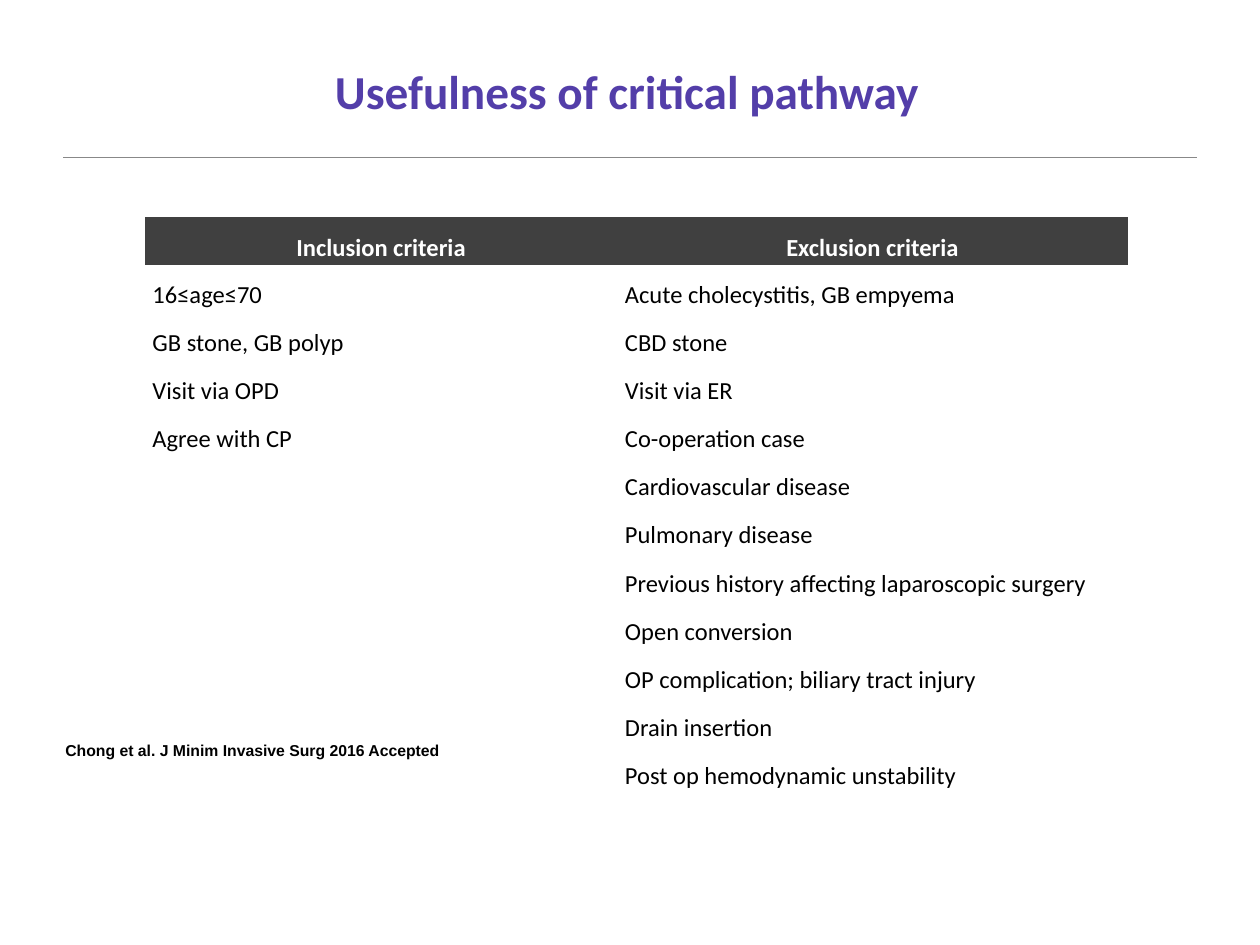
from itertools import zip_longest

from lxml import etree
from pptx import Presentation
from pptx.dml.color import RGBColor
from pptx.enum.shapes import MSO_CONNECTOR
from pptx.enum.text import MSO_ANCHOR, MSO_AUTO_SIZE, PP_ALIGN
from pptx.oxml.ns import qn
from pptx.util import Inches, Pt

STRAIGHT = MSO_CONNECTOR.STRAIGHT
MIDDLE, TOP = MSO_ANCHOR.MIDDLE, MSO_ANCHOR.TOP
LEFT, CENTER = PP_ALIGN.LEFT, PP_ALIGN.CENTER
NO_AUTO_SIZE = MSO_AUTO_SIZE.NONE
FIT_SHAPE = MSO_AUTO_SIZE.SHAPE_TO_FIT_TEXT

PURPLE = RGBColor(0x53, 0x3E, 0xA9)
RULE_GRAY = RGBColor(0x88, 0x88, 0x88)
HEADER_GRAY = RGBColor(0x40, 0x40, 0x40)
WHITE = RGBColor(0xFF, 0xFF, 0xFF)
BLACK = RGBColor(0, 0, 0)

PLAIN_TABLE_STYLE = "{2D5ABB26-0587-4C30-8999-92F81FD0307C}"
TITLE_ONLY = 5

HEADERS = ("Inclusion criteria", "Exclusion criteria")
INCLUSION = ("16≤age≤70", "GB stone, GB polyp", "Visit via OPD", "Agree with CP")
EXCLUSION = (
    "Acute cholecystitis, GB empyema",
    "CBD stone",
    "Visit via ER",
    "Co-operation case",
    "Cardiovascular disease",
    "Pulmonary disease",
    "Previous history affecting laparoscopic surgery",
    "Open conversion",
    "OP complication; biliary tract injury",
    "Drain insertion",
    "Post op hemodynamic unstability",
)


class SlideBuilder:
    body_font = "Calibri"
    note_font = "Arial"
    table_size = 14
    line_spacing = 1.5

    def __init__(self, slide):
        self.slide = slide

    def run(self, paragraph, text, size, color, bold=False, font=body_font):
        run = paragraph.add_run()
        run.text = text
        run.font.name = font
        run.font.size = Pt(size)
        run.font.bold = bold
        run.font.color.rgb = color

    def title(self, text, left, top, width, height):
        title = self.slide.shapes.title
        title.left, title.top = Inches(left), Inches(top)
        title.width, title.height = Inches(width), Inches(height)
        frame = title.text_frame
        frame.auto_size = NO_AUTO_SIZE
        frame.vertical_anchor = MIDDLE
        paragraph = frame.paragraphs[0]
        paragraph.alignment = CENTER
        self.run(paragraph, text, 27, PURPLE, bold=True)

    def rule(self, left, right, y):
        rule = self.slide.shapes.add_connector(
            STRAIGHT, Inches(left), Inches(y), Inches(right), Inches(y))
        rule.line.color.rgb = RULE_GRAY
        rule.line.width = Pt(1)
        etree.SubElement(rule._element.spPr, qn("a:effectLst"))

    def cell(self, cell, text, is_header):
        cell.margin_left = cell.margin_right = Inches(0.06)
        cell.margin_top = cell.margin_bottom = 0
        cell.vertical_anchor = MIDDLE if is_header else TOP
        if is_header:
            cell.fill.solid()
            cell.fill.fore_color.rgb = HEADER_GRAY
        else:
            cell.fill.background()
        if text:
            paragraph = cell.text_frame.paragraphs[0]
            paragraph.alignment = CENTER if is_header else LEFT
            paragraph.line_spacing = self.line_spacing
            color = WHITE if is_header else BLACK
            self.run(paragraph, text, self.table_size, color, bold=is_header)

    def table(self, rows, left, top, column_widths, height):
        frame = self.slide.shapes.add_table(
            len(rows), len(column_widths), Inches(left), Inches(top),
            Inches(sum(column_widths)), Inches(height))
        table = frame.table
        table.horz_banding = False
        table._tbl.tblPr.find(qn("a:tableStyleId")).text = PLAIN_TABLE_STYLE
        for column, width in zip(table.columns, column_widths):
            column.width = Inches(width)
        for row_index, texts in enumerate(rows):
            for column_index, text in enumerate(texts):
                self.cell(table.cell(row_index, column_index), text, row_index == 0)

    def note(self, text, left, top, width, height):
        box = self.slide.shapes.add_textbox(
            Inches(left), Inches(top), Inches(width), Inches(height))
        frame = box.text_frame
        frame.word_wrap = True
        frame.auto_size = FIT_SHAPE
        self.run(frame.paragraphs[0], text, 9, BLACK, bold=True, font=self.note_font)


def main():
    presentation = Presentation()
    presentation.slide_width, presentation.slide_height = Inches(10), Inches(7.5)
    slide = presentation.slides.add_slide(presentation.slide_layouts[TITLE_ONLY])
    builder = SlideBuilder(slide)
    builder.rule(0.5, 9.5, 1.25)
    builder.title("Usefulness of critical pathway", 1.6, 0.43, 6.75, 0.58)
    rows = [HEADERS, *zip_longest(INCLUSION, EXCLUSION, fillvalue="")]
    builder.table(rows, 1.15, 1.72, (3.75, 4.05), 4.59)
    builder.note("Chong et al. J Minim Invasive Surg 2016 Accepted", 0.42, 5.83, 3.5, 0.25)
    presentation.save("out.pptx")


if __name__ == "__main__":
    main()
